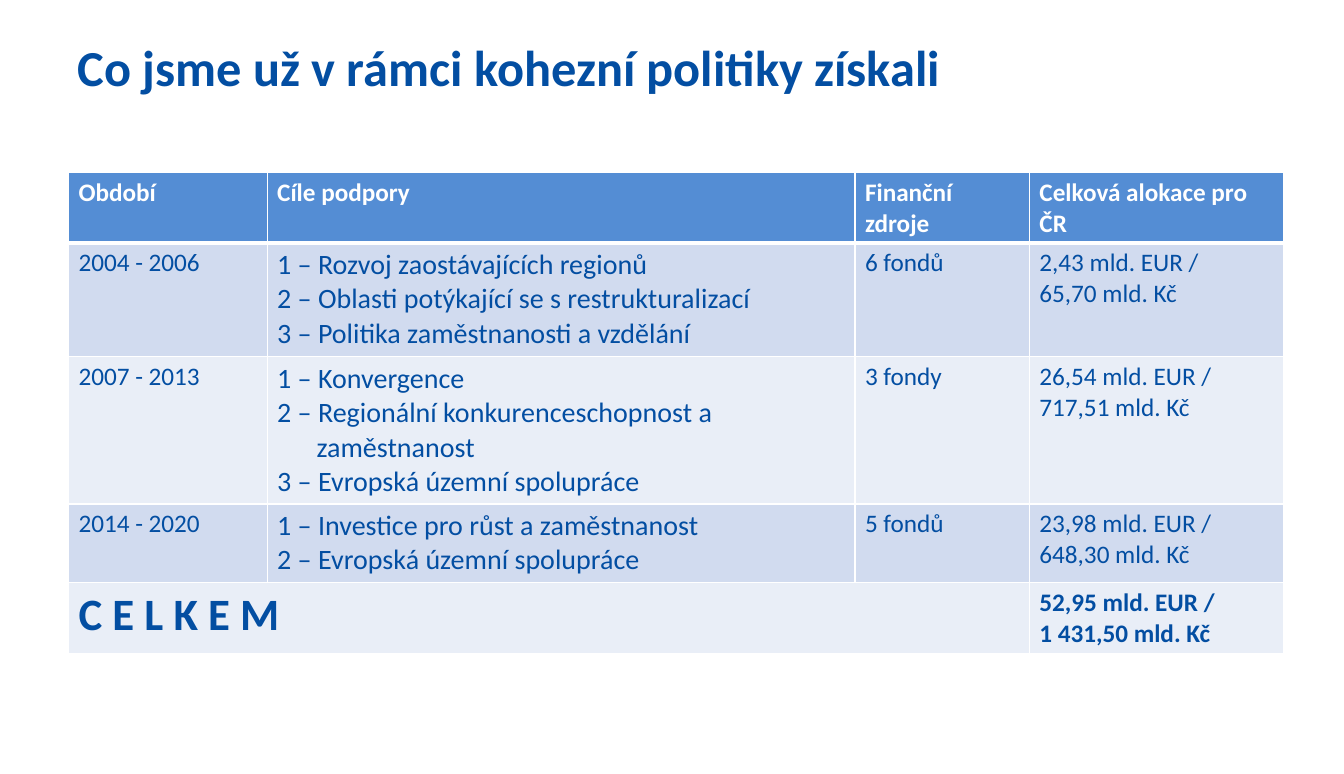
from lxml.etree import SubElement
from pptx import Presentation
from pptx.dml.color import RGBColor
from pptx.enum.text import MSO_ANCHOR
from pptx.oxml.ns import qn
from pptx.util import Inches, Pt

COLORS = {"blue": "034EA2", "header": "548DD4", "odd": "D1DBEF", "even": "E9EEF7", "white": "FFFFFF"}
COLUMN_WIDTHS = [1.97, 5.83, 1.73, 2.52]
ROW_HEIGHTS = [0.7, 1.13, 1.46, 0.78, 0.7]
ROWS = [
    ["Období", "Cíle podpory", "Finanční zdroje", "Celková alokace pro ČR"],
    ["2004 - 2006",
     "1 – Rozvoj zaostávajících regionů\n2 – Oblasti potýkající se s restrukturalizací\n"
     "3 – Politika zaměstnanosti a vzdělání",
     "6 fondů", "2,43 mld. EUR /\v65,70 mld. Kč"],
    ["2007 - 2013",
     "1 – Konvergence\n2 – Regionální konkurenceschopnost a zaměstnanost\n"
     "3 – Evropská územní spolupráce",
     "3 fondy", "26,54 mld. EUR / 717,51 mld. Kč"],
    ["2014 - 2020",
     "1 – Investice pro růst a zaměstnanost\n2 – Evropská územní spolupráce",
     "5 fondů", "23,98 mld. EUR / 648,30 mld. Kč"],
    ["C E L K E M", "", "", "52,95 mld. EUR /\v1 431,50 mld. Kč"],
]
TOTAL_ROW = len(ROWS) - 1


def format_text(frame, size, color, bold):
    """Apply one font to every run of a text frame."""
    for para in frame.paragraphs:
        for span in para.runs:
            span.font.name = "Calibri"
            span.font.size = Pt(size)
            span.font.bold = bold
            span.font.color.rgb = RGBColor.from_string(COLORS[color])


def add_title(page, text):
    """Add the slide heading."""
    box = page.shapes.add_textbox(Inches(0.67), Inches(0.31), Inches(12), Inches(1.01))
    frame = box.text_frame
    frame.word_wrap = True
    frame.vertical_anchor = MSO_ANCHOR.TOP
    frame.text = text
    format_text(frame, 36, "blue", True)


def set_borders(cell, top, bottom):
    """Draw white borders, with the top and bottom widths in points."""
    properties = cell._tc.get_or_add_tcPr()
    for side, width in (("L", 1), ("R", 1), ("T", top), ("B", bottom)):
        line = SubElement(properties, qn(f"a:ln{side}"), w=str(Pt(width)))
        fill = SubElement(line, qn("a:solidFill"))
        SubElement(fill, qn("a:srgbClr"), val=COLORS["white"])


def hang_paragraphs(frame, indent):
    """Give every paragraph a hanging indent."""
    for para in frame.paragraphs:
        properties = para._p.get_or_add_pPr()
        properties.set("marL", str(indent))
        properties.set("indent", str(-indent))


def fill_cell(cell, row, column, text):
    """Write and style one table cell by its place in the table."""
    header, total = row == 0, row == TOTAL_ROW
    set_borders(cell, 3 if row == 1 else 1, 3 if header else 1)
    cell.fill.solid()
    shade = "header" if header else "odd" if row % 2 else "even"
    cell.fill.fore_color.rgb = RGBColor.from_string(COLORS[shade])
    cell.text_frame.text = text
    if total and column == 0:
        size = 32
    else:
        size = 20 if column == 1 and not header else 18
    format_text(cell.text_frame, size, "white" if header else "blue", header or total)


def add_funding_table(page):
    """Add the table of programming periods and allocations."""
    frame = page.shapes.add_table(len(ROWS), len(COLUMN_WIDTHS), Inches(0.68), Inches(1.71),
                                  Inches(sum(COLUMN_WIDTHS)), Inches(sum(ROW_HEIGHTS)))
    table = frame.table
    for column, width in zip(table.columns, COLUMN_WIDTHS):
        column.width = Inches(width)
    for row, height in zip(table.rows, ROW_HEIGHTS):
        row.height = Inches(height)
    for row, texts in enumerate(ROWS):
        for column, text in enumerate(texts):
            fill_cell(table.cell(row, column), row, column, text)
    hang_paragraphs(table.cell(2, 1).text_frame, Inches(0.39))
    table.cell(TOTAL_ROW, 0).merge(table.cell(TOTAL_ROW, 2))


def main():
    """Build and save the slide."""
    deck = Presentation()
    deck.slide_width, deck.slide_height = Inches(13.33), Inches(7.68)
    page = deck.slides.add_slide(deck.slide_layouts[6])
    add_title(page, "Co jsme už v rámci kohezní politiky získali")
    add_funding_table(page)
    deck.save("out.pptx")


if __name__ == "__main__":
    main()
